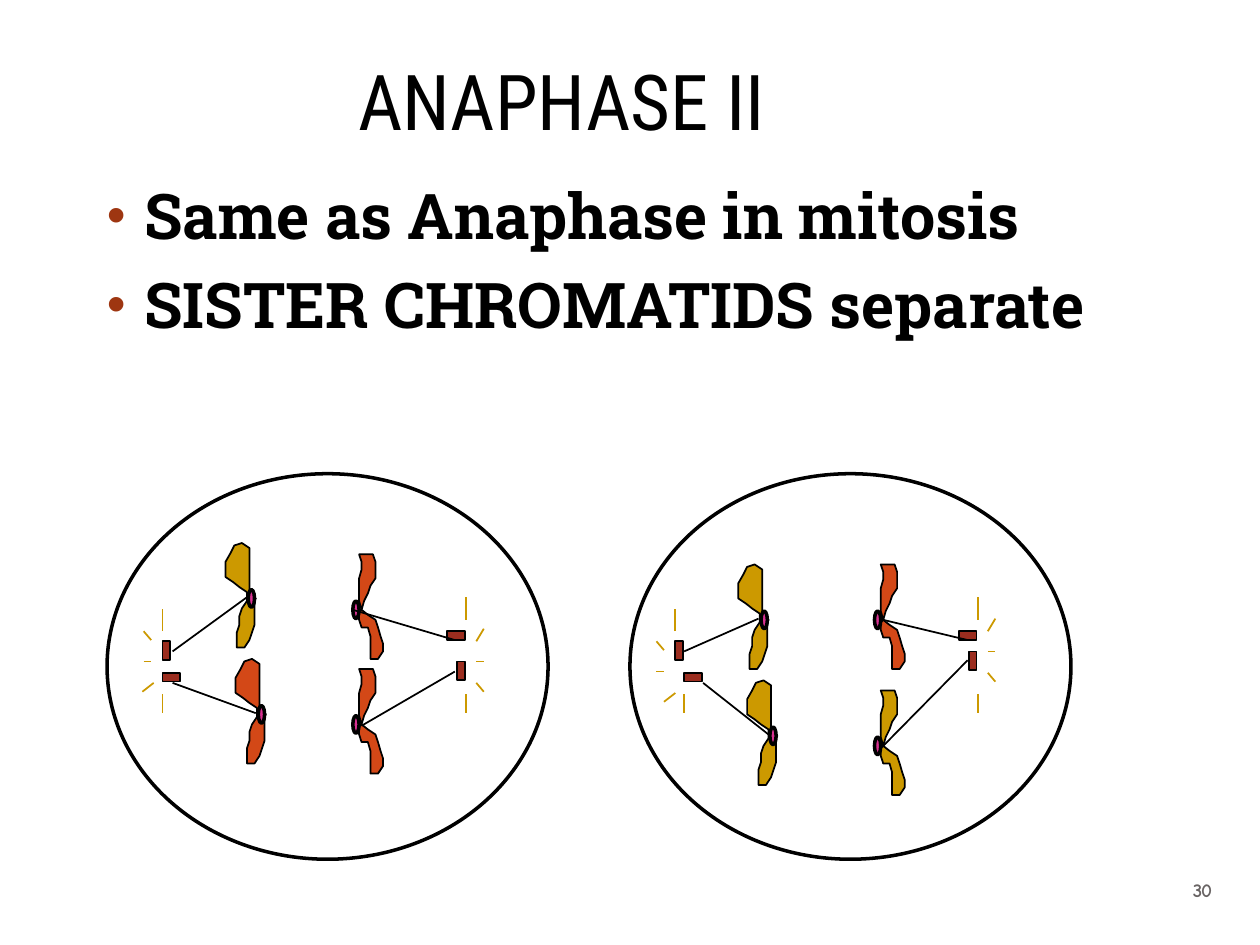
from lxml import etree
from pptx import Presentation
from pptx.dml.color import RGBColor
from pptx.enum.shapes import MSO_CONNECTOR, MSO_SHAPE
from pptx.enum.text import MSO_ANCHOR, PP_ALIGN
from pptx.oxml.ns import qn
from pptx.util import Inches, Pt

LINE = MSO_CONNECTOR.STRAIGHT
OVAL, RECT = MSO_SHAPE.OVAL, MSO_SHAPE.RECTANGLE
CENTER, MIDDLE = PP_ALIGN.CENTER, MSO_ANCHOR.MIDDLE

COLORS = {"black": "000000", "gray": "696464", "bullet": "9E3611",
          "orange": "D34817", "gold": "CC9900", "rod": "9B2D1F",
          "pink": "D93192"}

# Chromatid outlines, in hundredths of an inch from their top left corner
LEFT = [(24, 44), (19, 42), (19, 35), (19, 29), (19, 23), (19, 17), (19, 10),
        (19, 4), (13, 0), (7, 2), (4, 8), (0, 15), (0, 21), (0, 27), (6, 31),
        (11, 35), (17, 39), (17, 46), (13, 52), (11, 58), (11, 65), (9, 71),
        (9, 77), (9, 83), (15, 83), (19, 77), (21, 71), (23, 65), (23, 58),
        (23, 52), (23, 46)]
RIGHT = [(2, 44), (0, 37), (0, 31), (0, 25), (0, 19), (2, 12), (2, 6), (0, 0),
         (5, 0), (11, 0), (13, 6), (13, 12), (13, 19), (9, 25), (7, 31),
         (4, 37), (2, 44), (7, 48), (13, 52), (15, 58), (17, 65), (19, 71),
         (19, 77), (15, 83), (9, 83), (9, 77), (9, 71), (9, 65), (7, 58),
         (2, 58), (0, 52), (0, 46)]

# Outline, x, y, colour
CHROMATIDS = [
    (LEFT, 1.79, 4.31, "gold"), (LEFT, 1.87, 5.23, "orange"),
    (RIGHT, 2.85, 4.4, "orange"), (RIGHT, 2.85, 5.31, "orange"),
    (LEFT, 5.86, 4.48, "gold"), (LEFT, 5.93, 5.4, "gold"),
    (RIGHT, 6.99, 4.48, "orange"), (RIGHT, 6.99, 5.48, "gold")]
FIBERS = [
    (1.37, 5.17, 1.96, 4.74), (1.37, 5.42, 2.03, 5.66),
    (2.8, 4.84, 3.61, 5.08), (2.87, 5.76, 3.61, 5.33),
    (5.43, 5.17, 6.02, 4.91), (5.58, 5.42, 6.1, 5.83),
    (7.01, 4.92, 7.68, 5.08), (7.01, 5.92, 7.68, 5.24)]


def color(name):
    return RGBColor.from_string(COLORS[name])


class Sketch:
    """Holds the slide and the style of its elements."""

    def __init__(self, slide):
        self.slide = slide
        self.shapes = slide.shapes

    def style(self, shape, fill, width):
        shape.shadow.inherit = False
        if fill:
            shape.fill.solid()
            shape.fill.fore_color.rgb = color(fill)
        else:
            shape.fill.background()
        shape.line.color.rgb = color("black")
        shape.line.width = Pt(width)

    def shape(self, kind, x, y, w, h, fill=None, width=1):
        item = self.shapes.add_shape(kind, *map(Inches, (x, y, w, h)))
        self.style(item, fill, width)

    def outline(self, points, x, y, fill):
        pen = self.shapes.build_freeform(*points[0], scale=Inches(0.01))
        pen.add_line_segments(points[1:], close=True)
        self.style(pen.convert_to_shape(Inches(x), Inches(y)), fill, 1)

    def line(self, x1, y1, x2, y2, name):
        item = self.shapes.add_connector(LINE, *map(Inches, (x1, y1, x2, y2)))
        item.line.color.rgb = color(name)
        item.line.width = Pt(1)
        etree.SubElement(item._element.spPr, qn("a:effectLst"))

    def font(self, para, face, size, name="black", bold=False):
        para.font.name = face
        para.font.size = Pt(size)
        para.font.bold = bold
        para.font.color.rgb = color(name)

    def title(self, text, x, y, w, h):
        box = self.shapes.title
        box.left, box.top, box.width, box.height = map(Inches, (x, y, w, h))
        frame = box.text_frame
        frame.text = text
        frame.vertical_anchor = MIDDLE
        para = frame.paragraphs[0]
        para.alignment = CENTER
        para.line_spacing = 0.9
        self.font(para, "Roboto Condensed", 44)

    def box(self, x, y, w, h):
        frame = self.shapes.add_textbox(*map(Inches, (x, y, w, h))).text_frame
        frame.word_wrap = True
        return frame

    def bullets(self, items, x, y, w, h):
        frame = self.box(x, y, w, h)
        frame.text = "\n".join(items)
        for i, para in enumerate(frame.paragraphs):
            props = para._p.get_or_add_pPr()
            props.set("marL", str(Inches(0.3)))
            props.set("indent", str(Inches(-0.3)))
            tint = etree.SubElement(props, qn("a:buClr"))
            etree.SubElement(tint, qn("a:srgbClr"), val=COLORS["bullet"])
            etree.SubElement(props, qn("a:buSzPct"), val="85000")
            etree.SubElement(props, qn("a:buFont"), typeface="Arial")
            etree.SubElement(props, qn("a:buChar"), char="•")
            para.line_spacing = 0.9
            para.space_before = Pt(12 if i else 0)
            self.font(para, "Roboto Slab", 36, bold=True)

    def number(self, text, x, y, w, h):
        frame = self.box(x, y, w, h)
        frame.vertical_anchor = MIDDLE
        para = frame.paragraphs[0]
        para.alignment = CENTER
        run = para.add_run()
        run.text = text
        run._r.get_or_add_rPr().set("spc", "-70")
        self.font(para, "Comic Neue", 11, "gray", True)

    def rods(self, x1, y1, x2, y2):
        """Draw an upright and a flat centriole."""
        self.shape(RECT, x1, y1, 0.06, 0.15, "rod")
        self.shape(RECT, x2, y2, 0.14, 0.07, "rod")

    def left_pole(self, x, mid, shift):
        self.rods(x, 5.09, x + shift, 5.34)
        low = x + shift
        for ray in [(x, 5.01, x, 4.83), (low, 5.51, low, 5.66),
                    (x - 0.15, mid - 0.24, x - 0.09, mid - 0.17),
                    (x - 0.15, mid, x - 0.09, mid),
                    (low - 0.07, mid + 0.17, low - 0.16, mid + 0.24)]:
            self.line(*ray, "gold")

    def right_pole(self, x, mid):
        self.rods(x - 0.07, mid, x - 0.15, 5.01)
        for ray in [(x, 4.92, x, 4.74), (x, 5.51, x, 5.66)]:
            self.line(*ray, "gold")
        for start, end in [(-0.16, -0.26), (0, 0), (0.17, 0.24)]:
            self.line(x + 0.08, mid + start, x + 0.14, mid + end, "gold")


def main():
    deck = Presentation()
    deck.slide_width, deck.slide_height = Inches(10), Inches(7.5)
    art = Sketch(deck.slides.add_slide(deck.slide_layouts[5]))
    art.title("ANAPHASE II", 0.5, 0.35, 7.92, 0.98)
    art.bullets(["Same as Anaphase in mitosis",
                 "SISTER CHROMATIDS separate"], 0.75, 1.42, 8.5, 5.33)
    art.number("30", 9.28, 6.86, 0.53, 0.4)

    for points, x, y, fill in CHROMATIDS:
        art.outline(points, x, y, fill)
    for x in (0.85, 5):
        art.shape(OVAL, x, 3.76, 3.5, 3.06, width=2)
    art.left_pole(1.29, 5.25, 0)
    art.right_pole(3.7, 5.25)
    art.left_pole(5.36, 5.33, 0.07)
    art.right_pole(7.76, 5.17)
    for points, x, y, _ in CHROMATIDS:
        shift = 0.18 if points is LEFT else -0.05
        art.shape(OVAL, x + shift, y + 0.37, 0.05, 0.14, "pink", 2)
    for fiber in FIBERS:
        art.line(*fiber, "black")
    deck.save("out.pptx")


if __name__ == "__main__":
    main()
